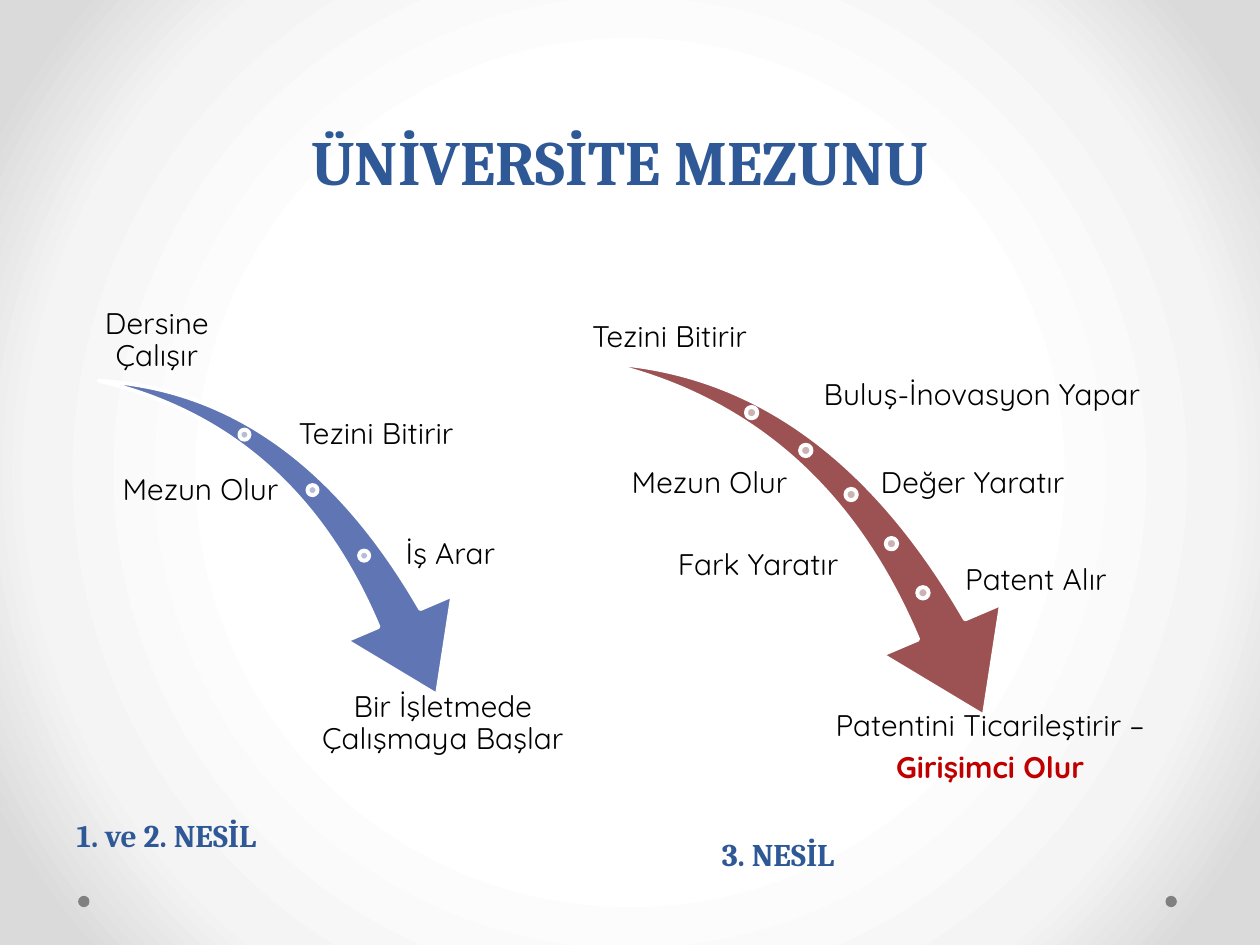
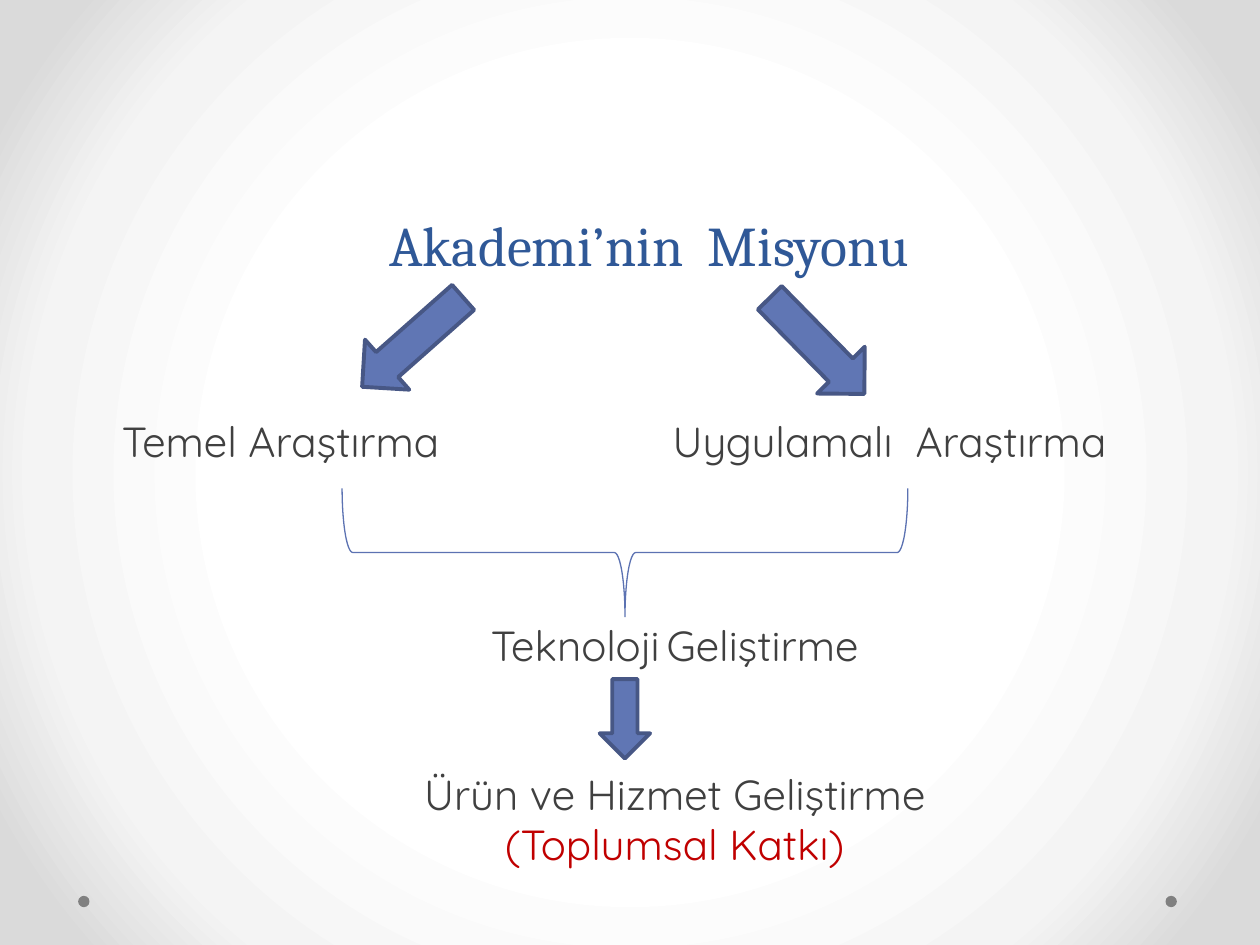
from lxml import etree
from pptx import Presentation
from pptx.dml.color import RGBColor
from pptx.enum.shapes import MSO_SHAPE as Shape
from pptx.enum.text import MSO_ANCHOR as Anchor, PP_ALIGN as Align
from pptx.oxml.ns import qn
from pptx.util import Inches, Pt

# Shared style
SERIF, SANS = "Cambria", "Quicksand"
TITLE_BLUE = RGBColor(0x2F, 0x58, 0x97)
BLUE = RGBColor(0x60, 0x76, 0xB4)
BLUE_EDGE = RGBColor(0x47, 0x57, 0x85)
BRACE_BLUE = RGBColor(0x5C, 0x72, 0xB2)
PALE_BLUE = RGBColor(0xB7, 0xBD, 0xD6)
BROWN = RGBColor(0x9C, 0x52, 0x52)
PALE_BROWN = RGBColor(0xCB, 0xB3, 0xB3)
RED = RGBColor(0xC0, 0x00, 0x00)
BLACK = RGBColor(0x00, 0x00, 0x00)
DARK = RGBColor(0x40, 0x40, 0x40)
GRAY = RGBColor(0x80, 0x80, 0x80)
WHITE = RGBColor(0xFF, 0xFF, 0xFF)
BACKGROUND_STOPS = [(50, "FFFFFF"), (76, "F4F4F4"), (92, "DADADA")]
FOOTER_DOTS = [(0.62, 7.11), (9.25, 7.11)]
FOOTER_DOT_SIZE = 0.09

# Slide 1: title, then one career path per generation
GRADUATE_TITLE = ("ÜNİVERSİTE MEZUNU", (0, 0.92, 9.84, 0.71))
CAREER_PATHS = [
    dict(
        heading=("1. ve 2. NESİL", (0.51, 6.43, 3.62, 0.4)),
        swoosh=(0.71, 3.12, 3.16, 2.2), fill=BLUE, dot_fill=PALE_BLUE, dot_size=0.08,
        dots=[(1.9, 3.41), (2.44, 3.85), (2.85, 4.37)],
        steps=[
            (["Dersine Çalışır"], (0.5, 2.39, 1.49, 0.59), Align.CENTER, Anchor.BOTTOM),
            (["Tezini Bitirir"], (2.35, 3.16, 2.17, 0.59), Align.LEFT, Anchor.MIDDLE),
            (["Mezun Olur"], (0.5, 3.6, 1.73, 0.59), Align.RIGHT, Anchor.MIDDLE),
            (["İş Arar"], (3.2, 4.11, 1.33, 0.59), Align.LEFT, Anchor.MIDDLE),
            (["Bir İşletmede Çalışmaya Başlar"], (2.51, 5.47, 2.01, 0.59),
             Align.CENTER, Anchor.TOP),
        ],
    ),
    dict(
        heading=("3. NESİL", (5.63, 6.58, 3.62, 0.4)),
        swoosh=(4.71, 2.99, 3.55, 2.47), fill=BROWN, dot_fill=PALE_BROWN, dot_size=0.09,
        dots=[(5.92, 3.23), (6.35, 3.53), (6.71, 3.88), (7.03, 4.27), (7.28, 4.66)],
        steps=[
            (["Tezini Bitirir"], (4.48, 2.17, 1.67, 0.66), Align.CENTER, Anchor.BOTTOM),
            (["Buluş-İnovasyon Yapar"], (5.81, 2.81, 3.26, 0.66), Align.RIGHT, Anchor.MIDDLE),
            (["Mezun Olur"], (4.29, 3.51, 1.98, 0.66), Align.RIGHT, Anchor.MIDDLE),
            (["Değer Yaratır"], (6.97, 3.51, 2.53, 0.66), Align.LEFT, Anchor.MIDDLE),
            (["Fark Yaratır"], (5.36, 4.16, 1.76, 0.66), Align.LEFT, Anchor.MIDDLE),
            (["Patent Alır"], (7.64, 4.28, 1.5, 0.66), Align.LEFT, Anchor.MIDDLE),
            (["Patentini Ticarileştirir –", "Girişimci Olur"], (5.86, 5.62, 4, 0.66),
             Align.CENTER, Anchor.TOP),
        ],
    ),
]
HIGHLIGHTED_STEP = "Girişimci Olur"

# Slide 2: mission, two kinds of research, shared outcome
MISSION_TITLE = ("Akademi’nin  Misyonu", (2.48, 1.62, 5.35, 0.63))
RESEARCH_KINDS = [
    ("Temel Araştırma", (0.87, 3.25, 3.66, 0.74)),
    ("Uygulamalı  Araştırma", (5.24, 3.25, 4.2, 0.74)),
]
OUTCOMES = ["Teknoloji Geliştirme", "Ürün ve Hizmet Geliştirme", "(Toplumsal Katkı)"]
OUTCOME_AREA = (1.93, 4.87, 6.85, 2.12)
DOWN_ARROWS = [
    ((3.01, 2.18, 0.53, 1.07), 48.5),
    ((6.22, 2.21, 0.53, 1.07), 315.5),
    ((4.76, 5.39, 0.4, 0.63), 0),
]
BRACE_AREA = (4.45, 2.14, 1.02, 4.49)


def set_background(master):
    """Give the master a radial gradient that every slide inherits."""
    master.background.fill.solid()
    properties = master._element.find(".//" + qn("p:bgPr"))
    gradient = etree.Element(qn("a:gradFill"), rotWithShape="1")
    stops = etree.SubElement(gradient, qn("a:gsLst"))
    for percent, color in BACKGROUND_STOPS:
        stop = etree.SubElement(stops, qn("a:gs"), pos=str(percent * 1000))
        etree.SubElement(stop, qn("a:srgbClr"), val=color)
    circle = etree.SubElement(gradient, qn("a:path"), path="circle")
    etree.SubElement(circle, qn("a:fillToRect"), {side: "50000" for side in "ltrb"})
    properties.replace(properties.find(qn("a:solidFill")), gradient)


def add_figure(page, kind, area, fill=None, line=None, width=2.25, rotation=0):
    figure = page.shapes.add_shape(kind, *map(Inches, area))
    figure.shadow.inherit = False
    figure.rotation = rotation
    if fill is None:
        figure.fill.background()
    else:
        figure.fill.solid()
        figure.fill.fore_color.rgb = fill
    if line is None:
        figure.line.fill.background()
    else:
        figure.line.color.rgb = line
        figure.line.width = Pt(width)
    return figure


def add_text(page, lines, area, size, font, color, bold=False,
             align=Align.LEFT, anchor=Anchor.TOP, inset=None):
    """Add a text box and return its paragraphs."""
    frame = page.shapes.add_textbox(*map(Inches, area)).text_frame
    frame.word_wrap = True
    frame.vertical_anchor = anchor
    if inset is not None:
        frame.margin_left = frame.margin_right = Inches(inset)
        frame.margin_top = frame.margin_bottom = Inches(inset)
    frame.text = "\n".join(lines)
    for para in frame.paragraphs:
        para.alignment = align
        para.font.name, para.font.size, para.font.bold = font, Pt(size), bold
        para.font.color.rgb = color
    return frame.paragraphs


def add_page(deck):
    page = deck.slides.add_slide(deck.slide_layouts[6])
    for left, top in FOOTER_DOTS:
        add_figure(page, Shape.OVAL, (left, top, FOOTER_DOT_SIZE, FOOTER_DOT_SIZE), GRAY)
    return page


def add_career_path(page, career):
    swoosh = add_figure(page, Shape.SWOOSH_ARROW, career["swoosh"], career["fill"],
                        WHITE, rotation=73.3)
    swoosh.adjustments[0], swoosh.adjustments[1] = 0.163, 0.314
    size = career["dot_size"]
    for left, top in career["dots"]:
        add_figure(page, Shape.OVAL, (left, top, size, size), career["dot_fill"], WHITE)
    for lines, area, align, anchor in career["steps"]:
        for para in add_text(page, lines, area, 17, SANS, BLACK,
                             align=align, anchor=anchor, inset=0.02):
            para.line_spacing = 0.9
            para.space_after = Pt(6)
            if para.text == HIGHLIGHTED_STEP:
                para.font.bold = True
                para.font.color.rgb = RED
    heading, area = career["heading"]
    add_text(page, [heading], area, 18, SERIF, TITLE_BLUE, bold=True)


def add_graduate_slide(deck):
    page = add_page(deck)
    title, area = GRADUATE_TITLE
    add_text(page, [title], area, 36, SERIF, TITLE_BLUE, bold=True, align=Align.CENTER)
    for career in CAREER_PATHS:
        add_career_path(page, career)


def add_mission_slide(deck):
    page = add_page(deck)
    title, area = MISSION_TITLE
    add_text(page, [title], area, 32, SERIF, TITLE_BLUE,
             align=Align.CENTER, anchor=Anchor.BOTTOM)
    for kind, area in RESEARCH_KINDS:
        add_text(page, [kind], area, 24, SANS, DARK)
    add_figure(page, Shape.RIGHT_BRACE, BRACE_AREA, line=BRACE_BLUE, width=0.75, rotation=90)
    technology, product, benefit = add_text(page, OUTCOMES, OUTCOME_AREA, 24, SANS, DARK,
                                            align=Align.CENTER)
    # The word gap in the first outcome is narrower than the text
    first, second = technology.text.split()
    technology.runs[0].text = first
    gap = technology.add_run()
    gap.text, gap.font.name, gap.font.size = " ", SERIF, Pt(18)
    technology.add_run().text = second
    product.space_before = Pt(56)  # room for the lower arrow
    benefit.font.color.rgb = RED
    for area, rotation in DOWN_ARROWS:
        add_figure(page, Shape.DOWN_ARROW, area, BLUE, BLUE_EDGE, rotation=rotation)


def main():
    deck = Presentation()
    deck.slide_width, deck.slide_height = Inches(10), Inches(7.5)
    set_background(deck.slide_master)
    add_graduate_slide(deck)
    add_mission_slide(deck)
    deck.save("out.pptx")


if __name__ == "__main__":
    main()
